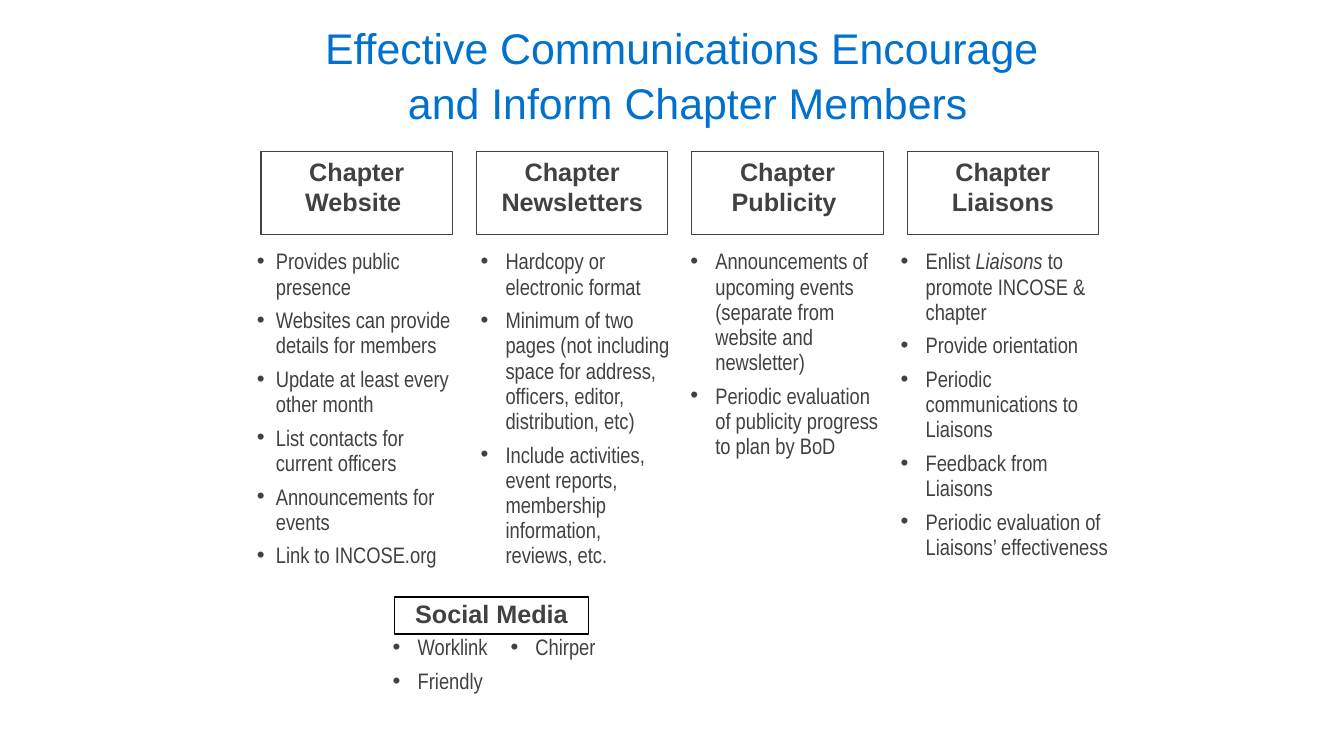
from lxml import etree
from pptx import Presentation
from pptx.dml.color import RGBColor
from pptx.enum.shapes import MSO_SHAPE
from pptx.enum.text import MSO_ANCHOR, MSO_AUTO_SIZE, PP_ALIGN
from pptx.oxml.ns import qn
from pptx.util import Cm, Pt

RECTANGLE = MSO_SHAPE.RECTANGLE
TOP, BOTTOM = MSO_ANCHOR.TOP, MSO_ANCHOR.BOTTOM
NO_AUTOFIT = MSO_AUTO_SIZE.NONE
LEFT, CENTER = PP_ALIGN.LEFT, PP_ALIGN.CENTER

COLORS = {"title": "0071CE", "text": "414042", "social": "000000"}
COMPARISON_LAYOUT = 3 + 1
HEADING_LEFT, HEADING_PITCH = 6.58, 5.43

# Heading, list left, list width, list height, indent (cm), items; *...* is italic
COLUMNS = [
    ("Chapter Website ", 6.22, 5.51, 8.38, 0.48, [
        "Provides public presence",
        "Websites can provide details for members",
        "Update at least every other month",
        "List contacts for current officers",
        "Announcements for events",
        "Link to INCOSE.org"]),
    ("Chapter Newsletters", 11.86, 5.28, 8.38, 0.63, [
        "Hardcopy or electronic format",
        "Minimum of two pages (not including space for address, "
        "officers, editor, distribution, etc)",
        "Include activities, event reports, membership information, "
        "reviews, etc."]),
    ("Chapter Publicity ", 17.15, 5.28, 7.32, 0.63, [
        "Announcements of upcoming events (separate from website and "
        "newsletter)",
        "Periodic evaluation of publicity progress to plan by BoD"]),
    ("Chapter Liaisons", 22.45, 5.99, 9.88, 0.63, [
        "Enlist *Liaisons* to promote INCOSE & chapter",
        "Provide orientation",
        "Periodic communications to Liaisons",
        "Feedback from Liaisons",
        "Periodic evaluation of Liaisons’ effectiveness"]),
]


def place(shape, left, top, width, height):
    shape.left, shape.top = Cm(left), Cm(top)
    shape.width, shape.height = Cm(width), Cm(height)


def style_run(run, name, size, color, bold=False, italic=False):
    font = run.font
    font.name, font.size = name, Pt(size)
    font.bold, font.italic = bold, italic
    font.color.rgb = RGBColor.from_string(COLORS[color])


def set_title(title, left, top, width, height):
    place(title, left, top, width, height)
    frame = title.text_frame
    frame.text = "Effective Communications Encourage \vand Inform Chapter Members"
    frame.auto_size, frame.vertical_anchor = NO_AUTOFIT, BOTTOM
    frame.margin_left = frame.margin_right = Cm(0.33)
    frame.margin_top = frame.margin_bottom = Cm(0.18)
    paragraph = frame.paragraphs[0]
    paragraph.alignment, paragraph.line_spacing = CENTER, 1.06
    for run in paragraph.runs:
        style_run(run, "Arial", 30.6, "title")


def add_heading(slide, text, left, top, width, height,
                line_color="text", line_width=0.75, line_spacing=1.0):
    shape = slide.shapes.add_shape(
        RECTANGLE, Cm(left), Cm(top), Cm(width), Cm(height))
    shape.shadow.inherit = False
    shape.fill.background()
    shape.line.color.rgb = RGBColor.from_string(COLORS[line_color])
    shape.line.width = Pt(line_width)
    frame = shape.text_frame
    frame.text = text
    frame.word_wrap, frame.vertical_anchor = True, TOP
    paragraph = frame.paragraphs[0]
    paragraph.alignment, paragraph.line_spacing = CENTER, line_spacing
    style_run(paragraph.runs[0], "Arial", 18, "text", bold=True)


def fill_list(shape, items, indent):
    frame = shape.text_frame
    frame.word_wrap, frame.auto_size = True, NO_AUTOFIT
    frame.vertical_anchor = TOP
    for index, item in enumerate(items):
        paragraph = frame.add_paragraph() if index else frame.paragraphs[0]
        paragraph.alignment, paragraph.line_spacing = LEFT, Pt(18)
        paragraph.space_before, paragraph.space_after = Pt(0), Pt(6)
        # Hanging bullet
        properties = paragraph._p.get_or_add_pPr()
        properties.set("marL", str(Cm(indent)))
        properties.set("indent", str(-Cm(indent)))
        etree.SubElement(properties, qn("a:buFont")).set("typeface", "Arial")
        etree.SubElement(properties, qn("a:buChar")).set("char", "•")
        for part, text in enumerate(item.split("*")):
            run = paragraph.add_run()
            run.text = text
            style_run(run, "Arial Narrow", 16, "text", italic=part % 2 == 1)


def add_columns(slide, top):
    for index, (heading, left, width, height, indent, items) in enumerate(COLUMNS):
        add_heading(slide, heading, HEADING_LEFT + index * HEADING_PITCH,
                    top, 4.83, 2.11)
        body = slide.placeholders[index + 1]
        place(body, left, top + 2.34, width, height)
        fill_list(body, items, indent)


def add_social_media(slide, left, top):
    add_heading(slide, "Social Media", left + 0.3, top, 4.88, 0.94,
                line_color="social", line_width=1, line_spacing=0.9)
    # Two lists side by side under the heading
    for offset, height, items in ((0, 1.75, ["Worklink", "Friendly"]),
                                  (2.97, 0.89, ["Chirper"])):
        box = slide.shapes.add_textbox(
            Cm(left + offset), Cm(top + 0.84), Cm(3.28), Cm(height))
        fill_list(box, items, 0.63)


def main():
    presentation = Presentation()
    presentation.slide_width, presentation.slide_height = Cm(33.88), Cm(19.05)
    slide = presentation.slides.add_slide(
        presentation.slide_layouts[COMPARISON_LAYOUT])
    set_title(slide.shapes.title, 6.22, 1.7, 22.23, 1.7)
    add_columns(slide, 3.81)
    add_social_media(slide, 9.65, 15.04)
    presentation.save("out.pptx")


if __name__ == "__main__":
    main()
